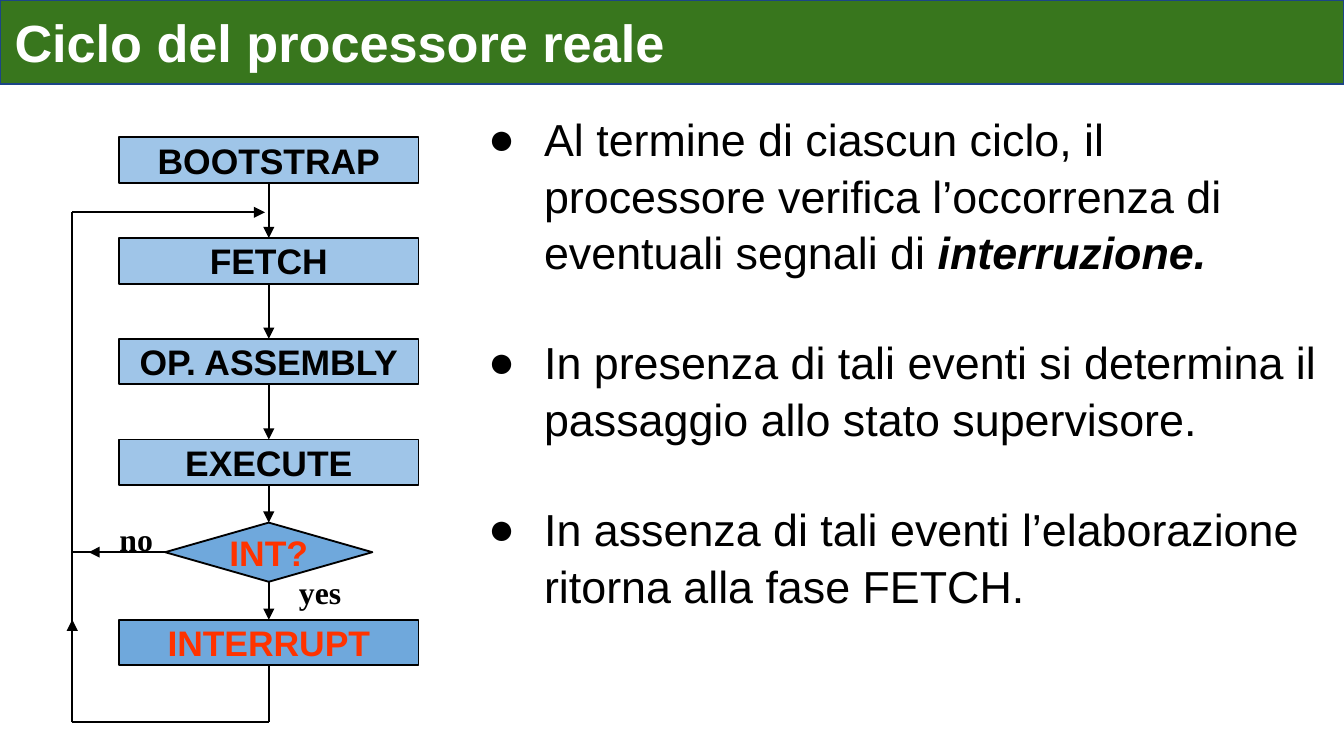
from lxml.etree import SubElement
from pptx import Presentation
from pptx.dml.color import RGBColor
from pptx.enum.shapes import MSO_CONNECTOR, MSO_SHAPE
from pptx.enum.text import MSO_ANCHOR, MSO_AUTO_SIZE, PP_ALIGN
from pptx.oxml.ns import qn
from pptx.util import Pt

COLORS = {
    "black": "000000", "white": "FFFFFF", "green": "38761D", "navy": "1C4587",
    "light": "9FC5E8", "blue": "6FA8DC", "red": "FF3300",
}
TITLE = "Ciclo del processore reale"
BULLETS = [
    [("Al termine di ciascun ciclo, il processore verifica l’occorrenza di eventuali segnali di ", False),
     ("interruzione.", True)],
    [("In presenza di tali eventi si determina il passaggio allo stato supervisore.", False)],
    [("In assenza di tali eventi l’elaborazione ritorna alla fase FETCH.", False)],
]
PHASES = ["BOOTSTRAP", "FETCH", "OP. ASSEMBLY", "EXECUTE"]
DECISION = "INT?"
HANDLER = "INTERRUPT"
LABELS = [("no", 57, 275.5, 32), ("yes", 152.5, 304, 38)]

CENTER = 144
BOX_WIDTH, BOX_HEIGHT = 160.5, 24.5
FIRST_TOP, STEP = 73.5, 54
DECISION_TOP, DECISION_WIDTH, DECISION_HEIGHT = 280, 111, 31.7
HANDLER_TOP = 332
LOOP_X, LOOP_BOTTOM, LOOP_TOP = 38.7, 387, 113.75
MARGINS = (6.5, 3, 6.5, 3)


def color(name):
    return RGBColor.from_string(COLORS[name])


def place(shape, left, top, width, height):
    shape.left, shape.top, shape.width, shape.height = map(Pt, (left, top, width, height))


def frame_text(shape, anchor, margins, wrap=True):
    frame = shape.text_frame
    frame.auto_size = MSO_AUTO_SIZE.NONE
    frame.word_wrap = wrap
    frame.vertical_anchor = anchor
    frame.margin_left, frame.margin_top, frame.margin_right, frame.margin_bottom = map(Pt, margins)
    return frame


def add_span(para, text, size, ink, bold=False, italic=False, face="Arial"):
    span = para.add_run()
    span.text = text
    span.font.name = face
    span.font.size = Pt(size)
    span.font.bold = bold
    span.font.italic = italic
    span.font.color.rgb = color(ink)


def paint(shape, fill, line, weight):
    shape.fill.solid()
    shape.fill.fore_color.rgb = color(fill)
    shape.line.color.rgb = color(line)
    shape.line.width = Pt(weight)


def add_step(page, kind, text, top, width, height, fill, ink):
    box = page.shapes.add_shape(kind, Pt(CENTER - width / 2), Pt(top), Pt(width), Pt(height))
    box.shadow.inherit = False
    paint(box, fill, "black", 1)
    para = frame_text(box, MSO_ANCHOR.MIDDLE, MARGINS, False).paragraphs[0]
    para.alignment = PP_ALIGN.CENTER
    add_span(para, text, 19, ink, bold=True)
    return box


def add_line(page, start, end, arrow=False):
    line = page.shapes.add_connector(MSO_CONNECTOR.STRAIGHT, *map(Pt, start + end))
    line.line.color.rgb = color("black")
    line.line.width = Pt(1)
    if arrow:
        SubElement(line.line._get_or_add_ln(), qn("a:tailEnd"), type="triangle")
    SubElement(line._element.spPr, qn("a:effectLst"))
    return line


def fill_title(title):
    place(title, 0, 0, 720, 45)
    paint(title, "green", "navy", 0.75)
    para = frame_text(title, MSO_ANCHOR.MIDDLE, (7.8, 0, 0, 0)).paragraphs[0]
    para.alignment = PP_ALIGN.LEFT
    add_span(para, TITLE, 28, "white", bold=True)


def fill_body(body):
    place(body, 249, 55.5, 471, 274)
    frame = frame_text(body, MSO_ANCHOR.TOP, MARGINS)
    for index, spans in enumerate(BULLETS):
        para = frame.add_paragraph() if index else frame.paragraphs[0]
        para.alignment = PP_ALIGN.LEFT
        para.line_spacing = 1.05
        para.space_before = Pt(28.9 if index else 0)
        para.space_after = Pt(0)
        properties = para._p.get_or_add_pPr()
        properties.set("marL", str(Pt(36)))
        properties.set("indent", str(Pt(-30)))
        tint = SubElement(properties, qn("a:buClr"))
        SubElement(tint, qn("a:srgbClr"), val=COLORS["black"])
        SubElement(properties, qn("a:buFont"), typeface="Arial")
        SubElement(properties, qn("a:buChar"), char="●")
        for text, strong in spans:
            add_span(para, text, 24, "black", strong, strong)


def draw_flow(page):
    steps = [
        add_step(page, MSO_SHAPE.RECTANGLE, text, FIRST_TOP + index * STEP,
                 BOX_WIDTH, BOX_HEIGHT, "light", "black")
        for index, text in enumerate(PHASES)
    ]
    steps.append(add_step(page, MSO_SHAPE.FLOWCHART_DECISION, DECISION, DECISION_TOP,
                          DECISION_WIDTH, DECISION_HEIGHT, "blue", "red"))
    steps.append(add_step(page, MSO_SHAPE.RECTANGLE, HANDLER, HANDLER_TOP,
                          BOX_WIDTH, BOX_HEIGHT, "blue", "red"))
    for upper, lower in zip(steps, steps[1:]):
        arrow = add_line(page, (CENTER, 0), (CENTER, 0), True)
        arrow.begin_connect(upper, 2)
        arrow.end_connect(lower, 0)

    handler_bottom = HANDLER_TOP + BOX_HEIGHT
    exit_line = add_line(page, (CENTER, handler_bottom), (CENTER, LOOP_BOTTOM))
    exit_line.begin_connect(steps[-1], 2)
    add_line(page, (CENTER, LOOP_BOTTOM), (LOOP_X, LOOP_BOTTOM))
    add_line(page, (LOOP_X, LOOP_BOTTOM), (LOOP_X, HANDLER_TOP), True)
    add_line(page, (LOOP_X, handler_bottom), (LOOP_X, LOOP_TOP))
    add_line(page, (LOOP_X, LOOP_TOP), (CENTER - 2, LOOP_TOP), True)

    middle = DECISION_TOP + DECISION_HEIGHT / 2
    vertex = (CENTER - DECISION_WIDTH / 2, middle)
    for end, arrow in ((LOOP_X, False), (47.5, True)):
        branch = add_line(page, vertex, (end, middle), arrow)
        branch.begin_connect(steps[-2], 1)

    for text, left, top, width in LABELS:
        label = page.shapes.add_textbox(Pt(left), Pt(top), Pt(width), Pt(24))
        para = frame_text(label, MSO_ANCHOR.TOP, MARGINS, False).paragraphs[0]
        para.alignment = PP_ALIGN.CENTER
        add_span(para, text, 17, "black", bold=True, face="Times New Roman")


def main():
    deck = Presentation()
    deck.slide_width, deck.slide_height = Pt(720), Pt(405)
    page = deck.slides.add_slide(deck.slide_layouts[1])
    fill_title(page.shapes.title)
    fill_body(page.placeholders[1])
    draw_flow(page)
    deck.save("out.pptx")


if __name__ == "__main__":
    main()
